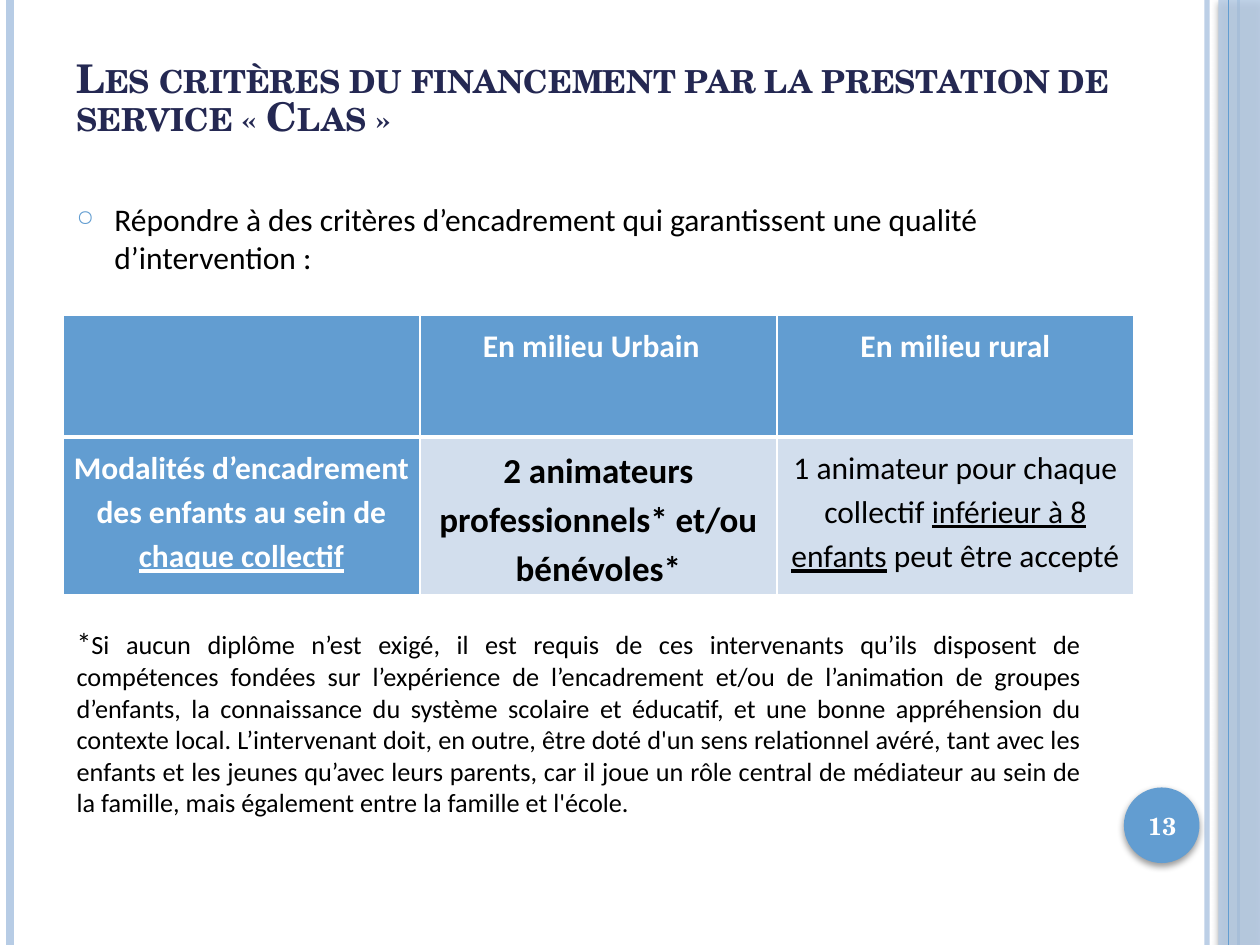
import pptx
import pptx.util
import pptx.dml.color
import pptx.enum.shapes
import pptx.enum.text
import pptx.oxml
import pptx.oxml.ns
import lxml.etree

Inches, Pt = pptx.util.Inches, pptx.util.Pt
RGB = pptx.dml.color.RGBColor
SHAPE = pptx.enum.shapes.MSO_SHAPE
ALIGN = pptx.enum.text.PP_ALIGN
ANCHOR = pptx.enum.text.MSO_ANCHOR
qn = pptx.oxml.ns.qn

COLORS = {
    "navy": "242852", "blue": "629DD1", "pale": "B7CCE5",
    "cell": "D2DEED", "white": "FFFFFF", "black": "000000",
}
BODY, HEADING = "Calibri", "TeX Gyre Schola"


def sub(parent, tag, **attrs):
    el = lxml.etree.SubElement(parent, qn(tag))
    for key, value in attrs.items():
        el.set(key, str(value))
    return el


class SlideBuilder:
    """Holds the style and the current slide."""

    def __init__(self, prs):
        self.slide = prs.slides.add_slide(prs.slide_layouts[6])

    def color(self, name):
        return RGB.from_string(COLORS[name])

    def set_alpha(self, el, percent):
        sub(el.find(".//" + qn("a:srgbClr")), "a:alpha", val=percent * 1000)

    def vertical_line(self, x, width, color, alpha=None):
        line = self.slide.shapes.add_connector(
            pptx.enum.shapes.MSO_CONNECTOR.STRAIGHT,
            Inches(x), Inches(0), Inches(x), Inches(7.5))
        line.line.color.rgb = self.color(color)
        line.line.width = Pt(width)
        if alpha:
            self.set_alpha(line._element.spPr, alpha)
        sub(line._element.spPr, "a:effectLst")

    def shadowed_shape(self, kind, box, color, alpha=None):
        sp = self.slide.shapes.add_shape(kind, *map(Inches, box))
        sp.shadow.inherit = False
        sp.fill.solid()
        sp.fill.fore_color.rgb = self.color(color)
        sp.line.fill.background()
        if alpha:
            self.set_alpha(sp._element.spPr, alpha)
        effects = sp._element.spPr.find(qn("a:effectLst"))
        shadow = sub(effects, "a:outerShdw", blurRad=Pt(4), dist=Pt(2),
                     dir=90 * 60000, rotWithShape=0)
        sub(shadow, "a:srgbClr", val=COLORS["black"])
        self.set_alpha(shadow, 40)

    def add_runs(self, p, runs, size, color="black", font=BODY, bold=False):
        """Each run is a text, or a (text, size, underline) tuple."""
        for run in runs:
            text, run_size, underline = (
                (run, size, False) if isinstance(run, str) else run)
            r = p.add_run()
            r.text = text
            r.font.name = font
            r.font.size = Pt(run_size)
            r.font.bold = bold
            r.font.underline = underline
            r.font.color.rgb = self.color(color)

    def text(self, box, runs, size, anchor=ANCHOR.TOP, align=ALIGN.LEFT, **style):
        tf = self.slide.shapes.add_textbox(*map(Inches, box)).text_frame
        tf.word_wrap = True
        tf.vertical_anchor = anchor
        p = tf.paragraphs[0]
        p.alignment = align
        self.add_runs(p, runs, size, **style)
        return p

    def title(self, box, text):
        p = self.text(box, [text], 22.6, ANCHOR.BOTTOM,
                      color="navy", font=HEADING, bold=True)
        p.line_spacing = 0.8
        p.runs[0]._r.get_or_add_rPr().set("cap", "small")

    def bullet(self, box, text):
        p = self.text(box, [text], 18)
        pPr = p._p.get_or_add_pPr()
        pPr.set("marL", str(Inches(0.3)))
        pPr.set("indent", str(Inches(-0.3)))
        sub(sub(pPr, "a:buClr"), "a:srgbClr", val=COLORS["blue"])
        sub(pPr, "a:buSzPct", val=70000)
        sub(pPr, "a:buChar", char="○")

    def borders(self, cell, **widths):
        tcPr = cell._tc.get_or_add_tcPr()
        for side in "LRTB":
            ln = sub(tcPr, "a:ln" + side, w=Pt(widths.get(side, 0.96)))
            sub(sub(ln, "a:solidFill"), "a:srgbClr", val=COLORS["white"])

    def table(self, box, heights, rows):
        """Each cell is (runs, size, text colour, bold, fill)."""
        table = self.slide.shapes.add_table(
            len(rows), len(rows[0]), *map(Inches, box)).table
        table.horz_banding = False
        for i, row in enumerate(rows):
            table.rows[i].height = Inches(heights[i])
            for j, (runs, size, color, bold, fill) in enumerate(row):
                cell = table.cell(i, j)
                self.borders(cell, **({"B": 3} if i == 0 else {"T": 3}))
                cell.fill.solid()
                cell.fill.fore_color.rgb = self.color(fill)
                cell.margin_left = cell.margin_right = Inches(0.07)
                p = cell.text_frame.paragraphs[0]
                p.alignment = ALIGN.CENTER
                p.line_spacing = 1.15
                self.add_runs(p, runs, size, color, bold=bold)


def main():
    prs = pptx.Presentation()
    prs.slide_width, prs.slide_height = Inches(10), Inches(7.5)
    s = SlideBuilder(prs)

    # Side bands and number badge
    s.vertical_line(9.58, 3, "pale", 93)
    s.vertical_line(0.08, 4.5, "pale")
    s.vertical_line(9.83, 1.5, "blue")
    s.shadowed_shape(SHAPE.RECTANGLE, (9.67, 0, 0.33, 7.5), "pale", 87)
    s.vertical_line(9.75, 0.75, "blue")
    s.shadowed_shape(SHAPE.OVAL, (8.92, 6.25, 0.6, 0.6), "blue")

    # Title and introduction
    s.title((0.51, 0.44, 8.58, 0.71),
            "Les critères du financement par la prestation de service « Clas »")
    s.bullet((0.51, 1.54, 8.17, 0.75),
             "Répondre à des critères d’encadrement qui garantissent une "
             "qualité d’intervention :")

    # Supervision criteria
    def header(*runs):
        return runs, 18, "white", True, "blue"

    s.table((0.5, 2.5, 8.5, 2.1), (0.97, 1.13), [
        [header(), header("En milieu Urbain  "), header("En milieu rural")],
        [header("Modalités d’encadrement des enfants au sein de ",
                ("chaque collectif", 18, True)),
         (["2 animateurs professionnels* et/ou bénévoles*"],
          20, "black", True, "cell"),
         (["1 animateur pour chaque collectif ",
           ("inférieur à 8 enfants", 18, True), " peut être accepté"],
          18, "black", False, "cell")],
    ])

    # Footnote
    s.text((0.51, 4.91, 8.17, 1.7), [
        ("*", 17, False),
        "Si aucun diplôme n’est exigé, il est requis de ces intervenants "
        "qu’ils disposent de compétences fondées sur l’expérience de "
        "l’encadrement et/ou de l’animation de groupes d’enfants, la "
        "connaissance du système scolaire et éducatif, et une bonne "
        "appréhension du contexte local. L’intervenant doit, en outre, être "
        "doté d'un sens relationnel avéré, tant avec les enfants et les "
        "jeunes qu’avec leurs parents, car il joue un rôle central de "
        "médiateur au sein de la famille, mais également entre la famille "
        "et l'école.",
    ], 15, align=ALIGN.JUSTIFY)

    # Slide number
    s.text((8.89, 6.27, 0.67, 0.57), ["13"], 14, ANCHOR.MIDDLE, ALIGN.CENTER,
           color="white", font=HEADING, bold=True)

    prs.save("out.pptx")


if __name__ == "__main__":
    main()
